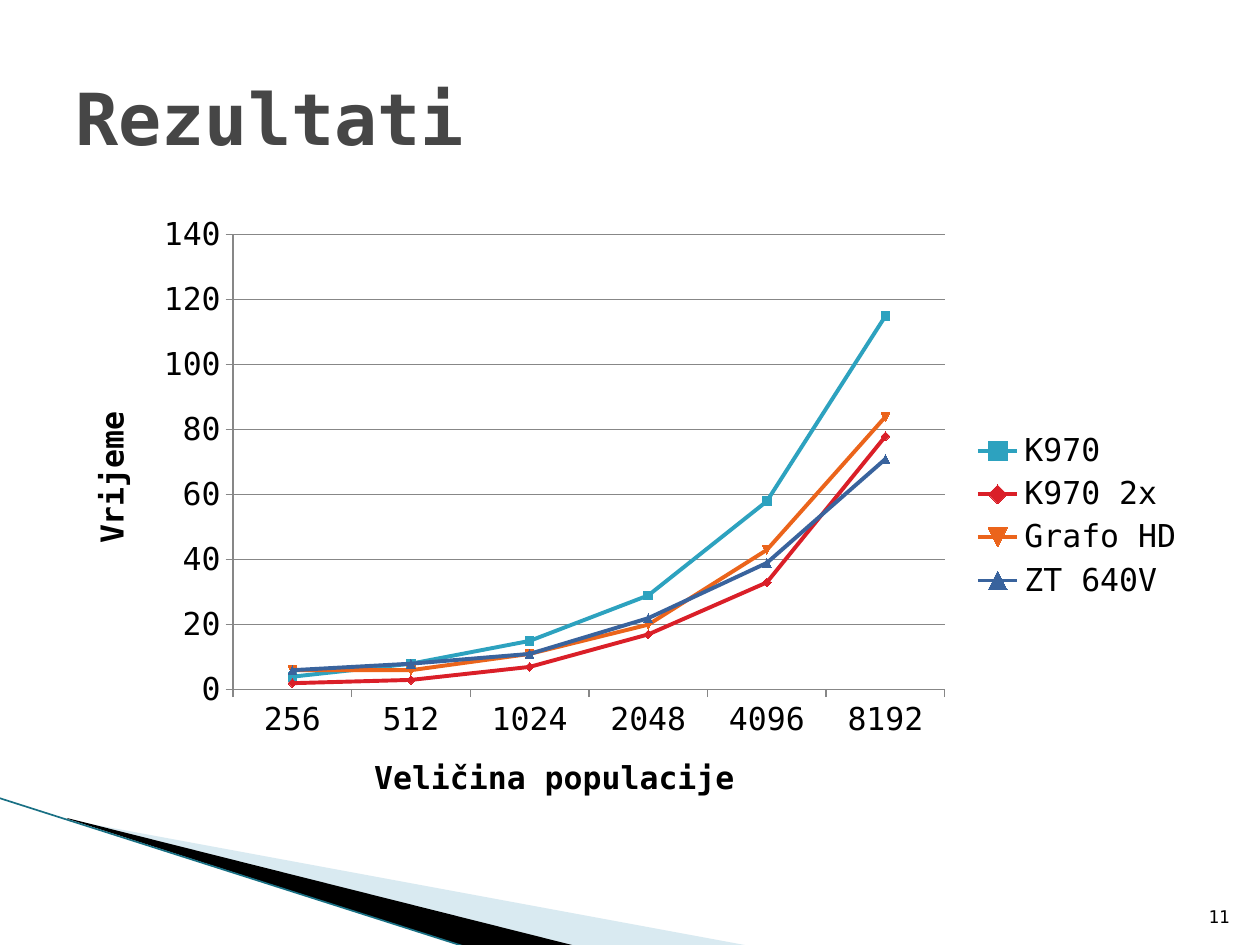
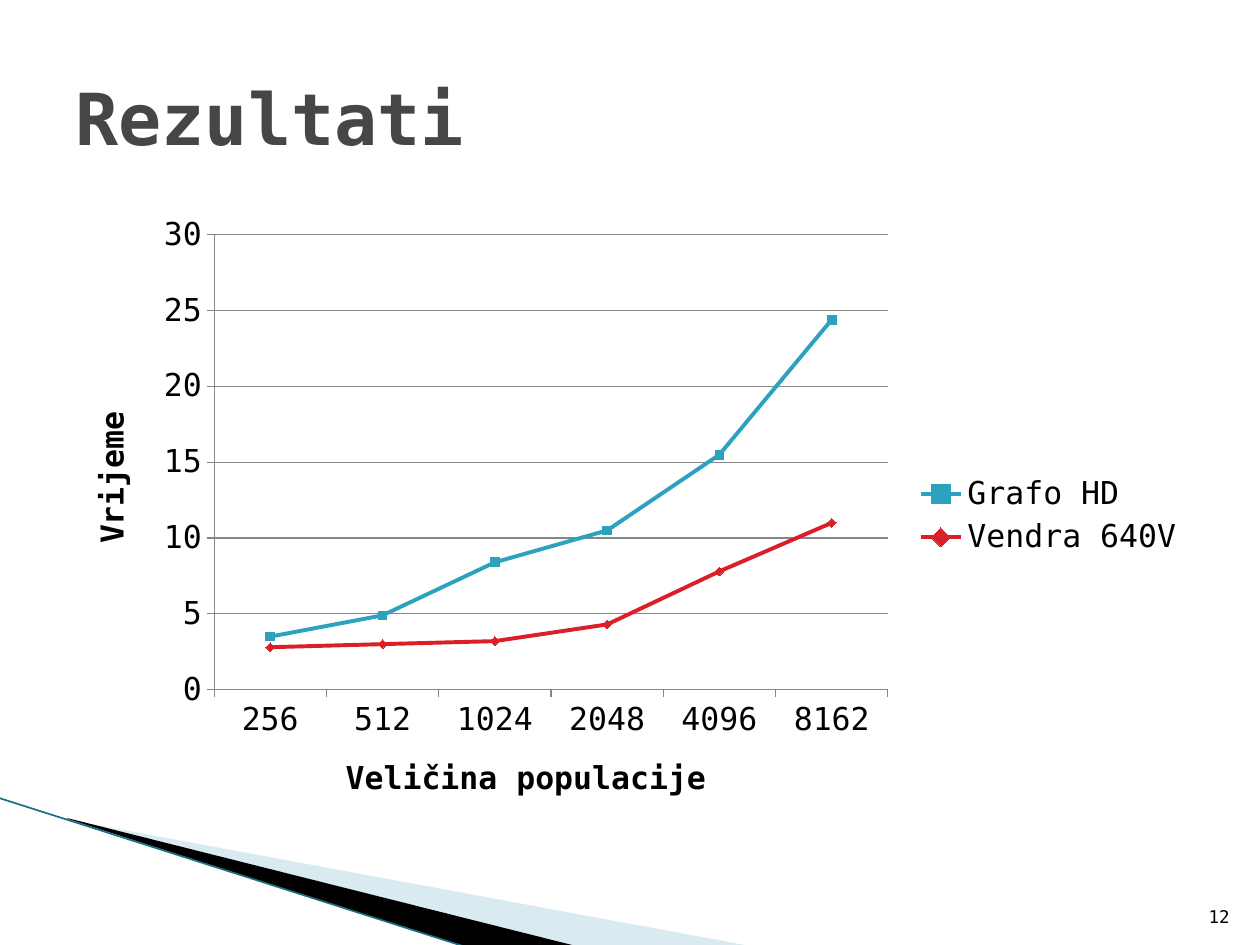
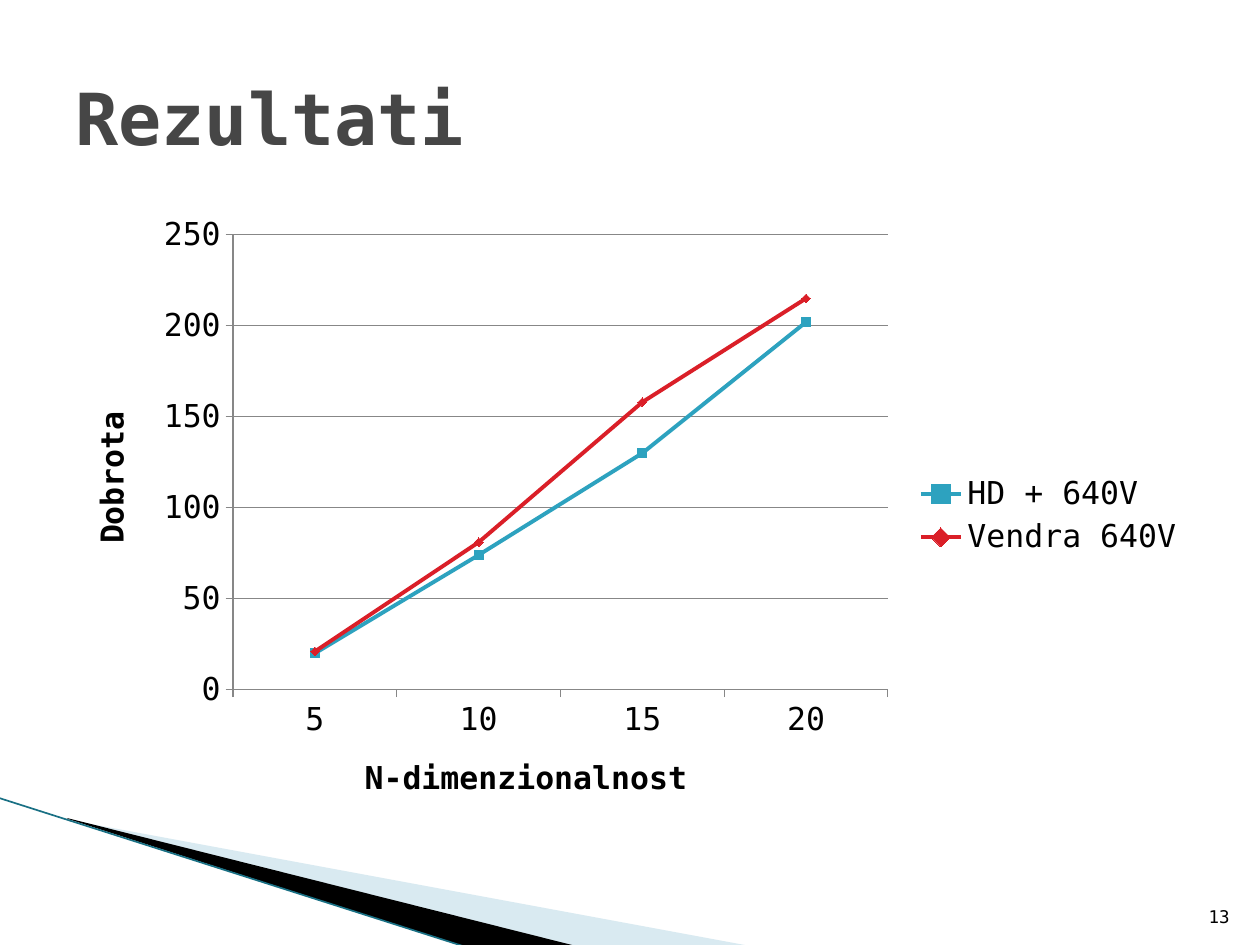
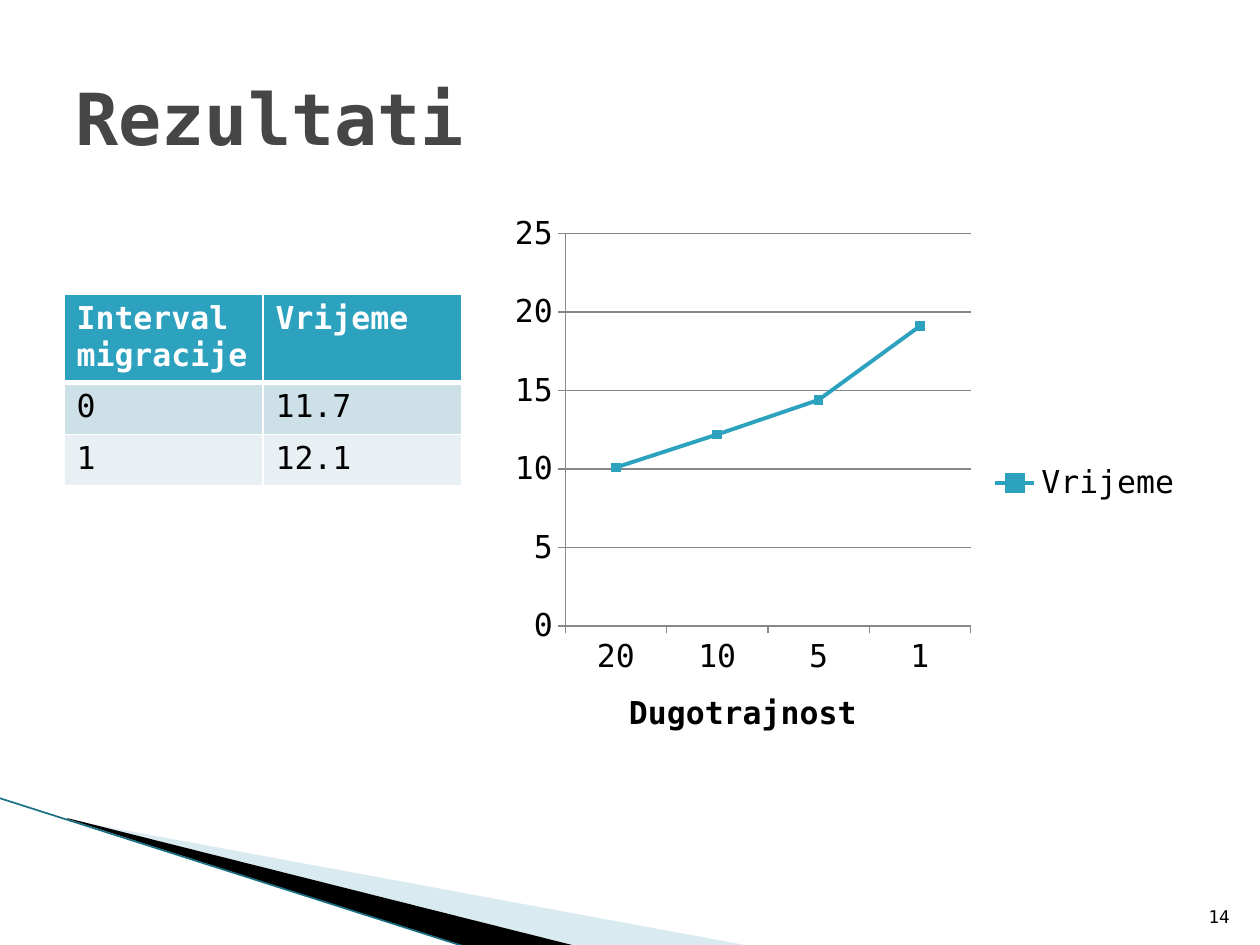
"""Builds four result slides with line charts and a table."""
import dataclasses

import lxml.etree
import pptx
import pptx.chart.data
import pptx.dml.color
import pptx.enum.chart
import pptx.enum.shapes
import pptx.enum.text
import pptx.oxml.ns
import pptx.util


@dataclasses.dataclass(frozen=True)
class Theme:
    font: str = "DejaVu Sans Mono"
    title: str = "464646"
    text: str = "000000"
    light: str = "FFFFFF"
    axis: str = "878787"
    band_pale: str = "A0CBDC"
    band_dark: str = "000000"
    band_edge: str = "197084"
    header: str = "2DA2BF"
    rows: tuple = ("CDE0E8", "E8F0F4")
    series: tuple = ("2DA2BF", "DA1F28", "EB641B", "39639D")
    title_size: int = 41
    body_size: int = 18
    number_size: int = 10


THEME = Theme()
EMU_PER_PX = 914400 / 126
SLIDE_SIZE = (1260, 945)
TITLE_BOX = (63, 38, 1134, 158)
NUMBER_BOX = (1192, 883, 50, 50)
WIDE_CHART = (63, 204, 1134, 624)
NARROW_CHART = (501, 204, 694, 559)
TABLE_CORNER = (64, 294)
COLUMN_WIDTH = 199
ROW_HEIGHT = 52
FIRST_NUMBER = 11

PALE_BAND = [(69, 820), (750, 946), (575, 946), (69, 819)]
DARK_BAND = [(67, 818), (576, 946), (469, 948), (68, 819)]
EDGE_LINE = (-1, 798, 469, 948)

SLIDES = [
    {"title": "Rezultati", "chart": {
        "box": WIDE_CHART, "x": "Veličina populacije", "y": "Vrijeme", "max": 140, "step": 20,
        "categories": ["256", "512", "1024", "2048", "4096", "8192"],
        "series": [("K970", [4, 8, 15, 29, 58, 115]),
                   ("K970 2x", [2, 3, 7, 17, 33, 78]),
                   ("Grafo HD", [6, 6, 11, 20, 43, 84]),
                   ("ZT 640V", [6, 8, 11, 22, 39, 71])]}},
    {"title": "Rezultati", "chart": {
        "box": WIDE_CHART, "x": "Veličina populacije", "y": "Vrijeme", "max": 30, "step": 5,
        "categories": ["256", "512", "1024", "2048", "4096", "8162"],
        "series": [("Grafo HD", [3.5, 4.9, 8.4, 10.5, 15.5, 24.4]),
                   ("Vendra 640V", [2.8, 3, 3.2, 4.3, 7.8, 11])]}},
    {"title": "Rezultati", "chart": {
        "box": WIDE_CHART, "x": "N-dimenzionalnost", "y": "Dobrota", "max": 250, "step": 50,
        "categories": ["5", "10", "15", "20"],
        "series": [("HD + 640V", [20, 74, 130, 202]),
                   ("Vendra 640V", [21, 81, 158, 215])]}},
    {"title": "Rezultati",
     "table": [("Interval migracije", "Vrijeme"), ("0", "11.7"), ("1", "12.1")],
     "chart": {
         "box": NARROW_CHART, "x": "Dugotrajnost", "y": None, "max": 25, "step": 5,
         "categories": ["20", "10", "5", "1"],
         "series": [("Vrijeme", [10.1, 12.2, 14.4, 19.1])]}},
]


def px(*lengths):
    return [pptx.util.Emu(round(length * EMU_PER_PX)) for length in lengths]


def rgb(color):
    return pptx.dml.color.RGBColor.from_string(color)


def add_element(parent, tag, **attributes):
    return lxml.etree.SubElement(parent, pptx.oxml.ns.qn(tag), attributes)


def set_font(font, size, color, bold=False):
    font.name, font.size, font.bold = THEME.font, pptx.util.Pt(size), bold
    font.color.rgb = rgb(color)


def set_line(line, color, width):
    line.color.rgb = rgb(color)
    line.width = pptx.util.Pt(width)


def add_text(slide, box, text, size, color, anchor, align, bold=False):
    frame = slide.shapes.add_textbox(*px(*box)).text_frame
    frame.word_wrap = True
    frame.vertical_anchor = anchor
    paragraph = frame.paragraphs[0]
    paragraph.text, paragraph.alignment = text, align
    set_font(paragraph.font, size, color, bold)


def add_band(slide, points, color, opacity=100):
    builder = slide.shapes.build_freeform(*points[0], scale=EMU_PER_PX)
    builder.add_line_segments(points[1:], close=True)
    shape = builder.convert_to_shape()
    shape.shadow.inherit = False
    shape.line.fill.background()
    shape.fill.solid()
    shape.fill.fore_color.rgb = rgb(color)
    if opacity < 100:
        fill_color = shape.element.spPr.find(".//" + pptx.oxml.ns.qn("a:srgbClr"))
        add_element(fill_color, "a:alpha", val=str(opacity * 1000))


def add_corner(slide):
    add_band(slide, PALE_BAND, THEME.band_pale, opacity=40)
    add_band(slide, DARK_BAND, THEME.band_dark)
    edge = slide.shapes.add_connector(pptx.enum.shapes.MSO_CONNECTOR.STRAIGHT, *px(*EDGE_LINE))
    set_line(edge.line, THEME.band_edge, 0.95)
    add_element(edge.element.spPr, "a:effectLst")


def style_axis(axis, title):
    axis.major_tick_mark = pptx.enum.chart.XL_TICK_MARK.OUTSIDE
    set_line(axis.format.line, THEME.axis, 0.75)
    axis.has_title = title is not None
    if title:
        frame = axis.axis_title.text_frame
        frame.text = title
        set_font(frame.paragraphs[0].font, THEME.body_size, THEME.text, bold=True)


def add_line_chart(slide, content):
    data = pptx.chart.data.CategoryChartData()
    data.categories = content["categories"]
    for name, values in content["series"]:
        data.add_series(name, values)
    kind = pptx.enum.chart.XL_CHART_TYPE.LINE_MARKERS
    chart = slide.shapes.add_chart(kind, *px(*content["box"]), data).chart
    set_font(chart.font, THEME.body_size, THEME.text)
    chart.has_title = False
    chart.has_legend = True
    chart.legend.position = pptx.enum.chart.XL_LEGEND_POSITION.RIGHT
    chart.legend.include_in_layout = False

    style_axis(chart.category_axis, content["x"])
    value_axis = chart.value_axis
    style_axis(value_axis, content["y"])
    if content["y"]:
        body = value_axis.axis_title.text_frame._txBody.bodyPr
        body.set("rot", "-5400000")
        body.set("vert", "horz")
    value_axis.minimum_scale, value_axis.maximum_scale = 0, content["max"]
    value_axis.major_unit = content["step"]
    set_line(value_axis.major_gridlines.format.line, THEME.axis, 0.75)

    chart.plots[0].vary_by_categories = False
    for series, color in zip(chart.plots[0].series, THEME.series):
        series.smooth = False
        set_line(series.format.line, color, 2.25)
        marker = series.marker.format
        marker.fill.solid()
        marker.fill.fore_color.rgb = rgb(color)
        set_line(marker.line, color, 0.75)


def add_borders(cell, row):
    properties = cell._tc.get_or_add_tcPr()
    widths = {"L": 1, "R": 1, "T": 3 if row == 1 else 1, "B": 3 if row == 0 else 1}
    for side, width in widths.items():
        border = add_element(properties, "a:ln" + side, w=str(pptx.util.Pt(width)))
        add_element(add_element(border, "a:solidFill"), "a:srgbClr", val=THEME.light)


def add_result_table(slide, rows):
    columns = len(rows[0])
    box = (*TABLE_CORNER, columns * COLUMN_WIDTH, len(rows) * ROW_HEIGHT)
    table = slide.shapes.add_table(len(rows), columns, *px(*box)).table
    for row, texts in enumerate(rows):
        header = row == 0
        for column, text in enumerate(texts):
            cell = table.cell(row, column)
            add_borders(cell, row)
            cell.fill.solid()
            cell.fill.fore_color.rgb = rgb(THEME.header if header else THEME.rows[(row - 1) % 2])
            cell.text = text
            set_font(cell.text_frame.paragraphs[0].font, THEME.body_size,
                     THEME.light if header else THEME.text, bold=header)


def main():
    presentation = pptx.Presentation()
    presentation.slide_width, presentation.slide_height = px(*SLIDE_SIZE)
    anchor, align = pptx.enum.text.MSO_ANCHOR, pptx.enum.text.PP_ALIGN
    for number, content in enumerate(SLIDES, FIRST_NUMBER):
        slide = presentation.slides.add_slide(presentation.slide_layouts[6])
        add_corner(slide)
        add_text(slide, TITLE_BOX, content["title"], THEME.title_size, THEME.title,
                 anchor.MIDDLE, align.LEFT, bold=True)
        if "table" in content:
            add_result_table(slide, content["table"])
        add_line_chart(slide, content["chart"])
        add_text(slide, NUMBER_BOX, str(number), THEME.number_size, THEME.text,
                 anchor.BOTTOM, align.RIGHT)
    presentation.save("out.pptx")


if __name__ == "__main__":
    main()
